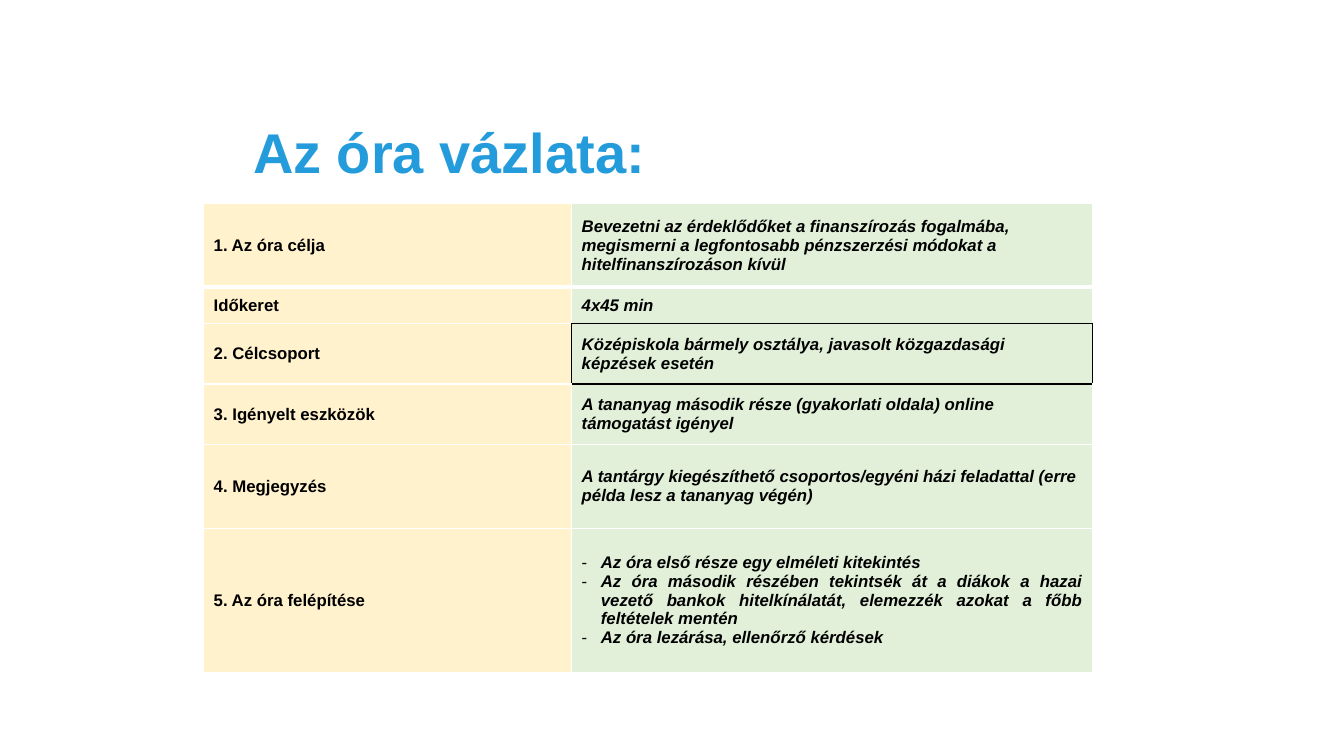
import pptx
import pptx.dml.color
import pptx.enum.text
import pptx.oxml
import pptx.oxml.ns
import pptx.util

WIDTH = pptx.util.Inches(13.33)
HEIGHT = pptx.util.Inches(7.5)
COLUMNS = [27.38, 38.78]
ROWS = [
    (11.07, "1. Az óra célja",
     ["Bevezetni az érdeklődőket a finanszírozás fogalmába, megismerni a "
      "legfontosabb pénzszerzési módokat a hitelfinanszírozáson kívül"]),
    (4.8, "Időkeret", ["4x45 min"]),
    (8, "2. Célcsoport",
     ["Középiskola bármely osztálya, javasolt közgazdasági képzések esetén"]),
    (8, "3. Igényelt eszközök",
     ["A tananyag második része (gyakorlati oldala) online támogatást igényel"]),
    (11.07, "4. Megjegyzés",
     ["A tantárgy kiegészíthető csoportos/egyéni házi feladattal "
      "(erre példa lesz a tananyag végén)"]),
    (19.07, "5. Az óra felépítése",
     ["Az óra első része egy elméleti kitekintés",
      "Az óra második részében tekintsék át a diákok a hazai vezető bankok "
      "hitelkínálatát, elemezzék azokat a főbb feltételek mentén",
      "Az óra lezárása, ellenőrző kérdések"]),
]
FRAMED_ROW = 2


def across(percent):
    return round(WIDTH * percent / 100)


def down(percent):
    return round(HEIGHT * percent / 100)


def color(value):
    return pptx.dml.color.RGBColor.from_string(value)


def format_runs(p, size, value, italic=False):
    for r in p.runs:
        r.font.name = "Arial"
        r.font.size = pptx.util.Pt(size)
        r.font.bold = True
        r.font.italic = italic
        r.font.color.rgb = color(value)


def add_title(s, text):
    sp = s.shapes.title
    sp.left, sp.top = across(18.08), down(17.47)
    sp.width, sp.height = across(42.54), down(6.27)
    tf = sp.text_frame
    tf.text = text
    tf.word_wrap = True
    tf.auto_size = pptx.enum.text.MSO_AUTO_SIZE.NONE
    tf.vertical_anchor = pptx.enum.text.MSO_ANCHOR.MIDDLE
    p = tf.paragraphs[0]
    p.alignment = pptx.enum.text.PP_ALIGN.LEFT
    p.line_spacing = 0.9
    format_runs(p, 40, "249CDC")


def add_dash(p):
    pPr = p._p.get_or_add_pPr()
    indent = pptx.util.Inches(0.19)
    pPr.set("marL", str(indent))
    pPr.set("indent", str(-indent))
    for tag, key, value in (("buFont", "typeface", "Arial"), ("buChar", "char", "-")):
        pptx.oxml.ns.qn("a:" + tag)
        element = pptx.oxml.parse_xml(
            f'<a:{tag} {pptx.oxml.ns.nsdecls("a")} {key}="{value}"/>')
        pPr.append(element)


def set_borders(cell, borders):
    tcPr = cell._tc.get_or_add_tcPr()
    for side in "LRTB":
        value, width = borders.get(side, ("FFFFFF", 1))
        tcPr.append(pptx.oxml.parse_xml(
            f'<a:ln{side} {pptx.oxml.ns.nsdecls("a")} w="{pptx.util.Pt(width)}">'
            f'<a:solidFill><a:srgbClr val="{value}"/></a:solidFill></a:ln{side}>'))


def borders_at(row, column):
    black = ("000000", 1)
    if row == 0:
        return {"B": ("FFFFFF", 3)}
    if row == 1:
        return {"T": ("FFFFFF", 3), **({"B": black} if column else {})}
    if row == FRAMED_ROW:
        return dict.fromkeys("LRTB", black) if column else {"R": black}
    if row == FRAMED_ROW + 1 and column:
        return {"T": black}
    return {}


def fill_cell(cell, lines, fill, italic, justified, borders):
    set_borders(cell, borders)
    cell.fill.solid()
    cell.fill.fore_color.rgb = color(fill)
    cell.vertical_anchor = pptx.enum.text.MSO_ANCHOR.MIDDLE
    tf = cell.text_frame
    tf.text = "\n".join(lines)
    align = pptx.enum.text.PP_ALIGN
    for p in tf.paragraphs:
        p.alignment = align.JUSTIFY if justified else align.LEFT
        if len(lines) > 1:
            add_dash(p)
        format_runs(p, 12, "000000", italic)


def add_outline_table(s):
    frame = s.shapes.add_table(
        len(ROWS), len(COLUMNS), across(15.15), down(26.93),
        across(sum(COLUMNS)), down(sum(row[0] for row in ROWS)))
    table = frame.table
    table.first_row = False
    table.horz_banding = False
    for column, share in zip(table.columns, COLUMNS):
        column.width = across(share)
    for i, (share, label, details) in enumerate(ROWS):
        table.rows[i].height = down(share)
        fill_cell(table.cell(i, 0), [label], "FFF2CC", False, True, borders_at(i, 0))
        fill_cell(table.cell(i, 1), details, "E2F0D9", True, len(details) > 1,
                  borders_at(i, 1))


def main():
    prs = pptx.Presentation()
    prs.slide_width, prs.slide_height = WIDTH, HEIGHT
    s = prs.slides.add_slide(prs.slide_layouts[5])
    add_title(s, "Az óra vázlata:")
    add_outline_table(s)
    prs.save("out.pptx")


if __name__ == "__main__":
    main()
